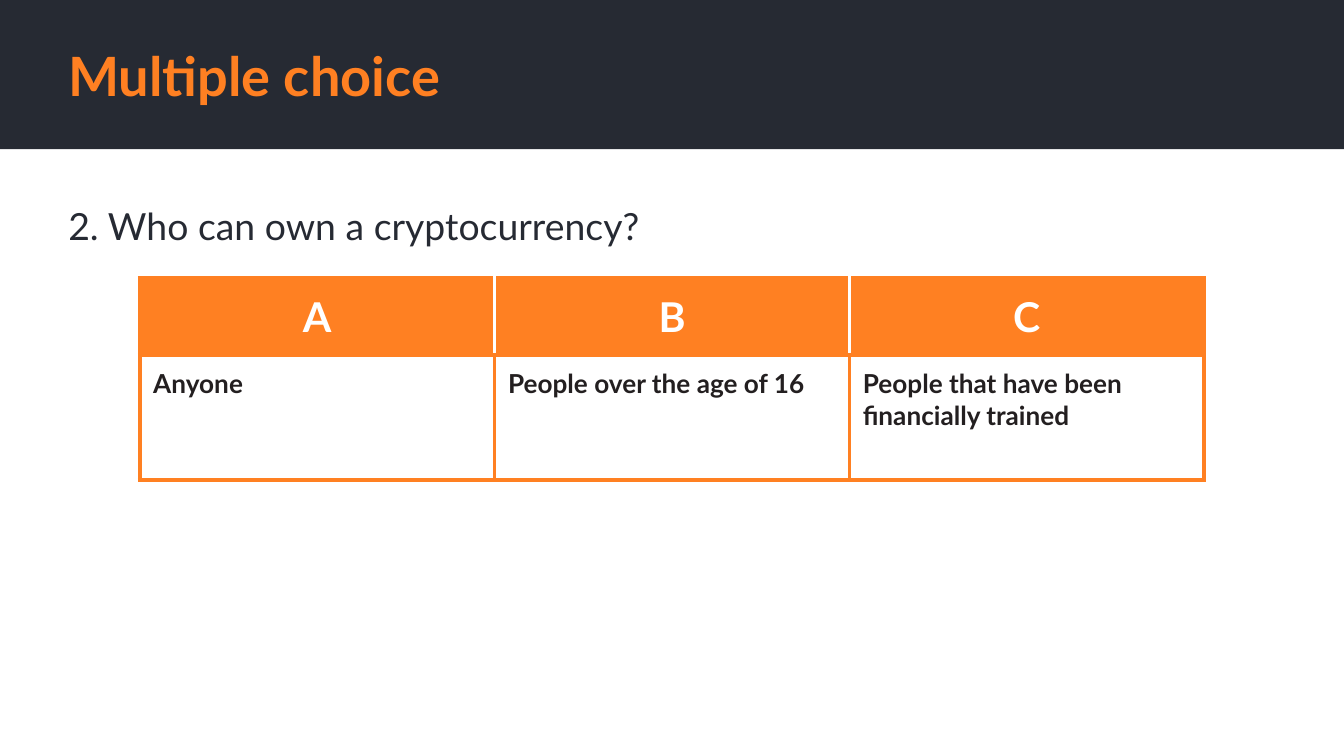
from lxml.etree import SubElement
from pptx import Presentation
from pptx.dml.color import RGBColor
from pptx.enum.shapes import MSO_SHAPE
from pptx.enum.text import MSO_ANCHOR, PP_ALIGN
from pptx.oxml.ns import qn
from pptx.util import Inches, Pt

ORANGE = RGBColor(0xFF, 0x80, 0x22)
NAVY = RGBColor(0x26, 0x2A, 0x33)
INK = RGBColor(0x23, 0x1F, 0x20)
WHITE = RGBColor(0xFF, 0xFF, 0xFF)

MARGINS = {f"margin_{side}": Inches(0.1) for side in ("left", "top", "right", "bottom")}


def write(frame, text, size, color, bold, align=PP_ALIGN.LEFT):
    para = frame.paragraphs[0]
    para.alignment = align
    span = para.add_run()
    span.text = text
    font_format = {"name": "Lato", "size": Pt(size), "bold": bold}
    for name, value in font_format.items():
        setattr(span.font, name, value)
    span.font.color.rgb = color


def set_borders(cell, colors):
    properties = cell._tc.get_or_add_tcPr()
    for index, (side, color) in enumerate(colors.items()):
        line = SubElement(properties, qn(f"a:ln{side}"), w=str(Pt(2.25)))
        fill = SubElement(line, qn("a:solidFill"))
        SubElement(fill, qn("a:srgbClr"), val=str(color))
        properties.insert(index, line)


deck = Presentation()
deck.slide_width = Inches(10)
deck.slide_height = Inches(10 * 9 / 16)
page = deck.slides.add_slide(deck.slide_layouts[6])

banner = page.shapes.add_shape(MSO_SHAPE.RECTANGLE, 0, 0, deck.slide_width, Inches(1.11))
banner.shadow.inherit = False
banner.fill.solid()
banner.fill.fore_color.rgb = NAVY
banner.line.fill.background()

texts = [
    ("2. Who can own a cryptocurrency?", 1.41, 8.38, 1.28, 20, NAVY, False, MSO_ANCHOR.TOP),
    ("Multiple choice", 0.28, 8.74, 0.56, 29, ORANGE, True, MSO_ANCHOR.MIDDLE),
]
for text, top, width, height, size, color, bold, anchor in texts:
    box = page.shapes.add_textbox(Inches(0.41), Inches(top), Inches(width), Inches(height))
    frame_format = {"word_wrap": True, "vertical_anchor": anchor, **MARGINS}
    for name, value in frame_format.items():
        setattr(box.text_frame, name, value)
    write(box.text_frame, text, size, color, bold)

answers = {
    "A": "Anyone",
    "B": "People over the age of 16",
    "C": "People that have been financially trained",
}
row_heights = [0.57, 0.93]
column_width = 2.64
table = page.shapes.add_table(
    len(row_heights), len(answers), Inches(1.04), Inches(2.07),
    Inches(column_width * len(answers)), Inches(sum(row_heights)),
).table
for row, height in zip(table.rows, row_heights):
    row.height = Inches(height)

last = len(answers) - 1
for column, (letter, answer) in enumerate(answers.items()):
    table.columns[column].width = Inches(column_width)
    header, body = table.cell(0, column), table.cell(1, column)
    for cell in (header, body):
        for name, value in MARGINS.items():
            setattr(cell, name, value)
    header.fill.solid()
    header.fill.fore_color.rgb = ORANGE
    body.fill.background()
    write(header.text_frame, letter, 22, WHITE, True, PP_ALIGN.CENTER)
    write(body.text_frame, answer, 14, INK, True)
    set_borders(header, {
        "L": WHITE if column > 0 else ORANGE,
        "R": WHITE if column < last else ORANGE,
        "T": ORANGE,
        "B": ORANGE,
    })
    set_borders(body, dict.fromkeys("LRTB", ORANGE))

deck.save("out.pptx")
